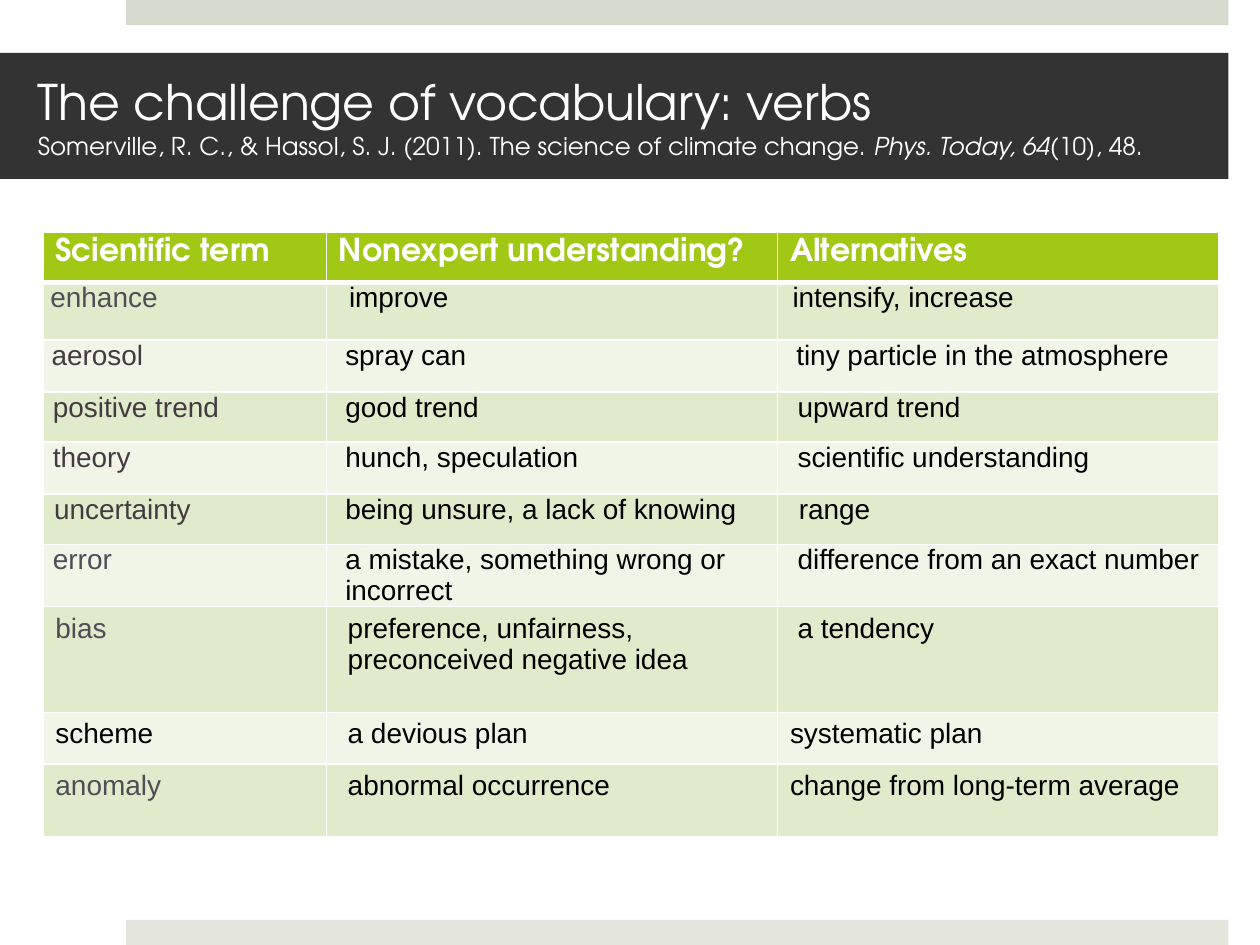
from lxml import etree
from pptx import Presentation
from pptx.dml.color import RGBColor
from pptx.enum.shapes import MSO_SHAPE
from pptx.enum.text import MSO_ANCHOR, PP_ALIGN
from pptx.oxml.ns import qn
from pptx.util import Inches, Pt

RECTANGLE = MSO_SHAPE.RECTANGLE
MIDDLE = MSO_ANCHOR.MIDDLE
LEFT = PP_ALIGN.LEFT

WHITE = RGBColor(0xFF, 0xFF, 0xFF)
BLACK = RGBColor(0x00, 0x00, 0x00)
TOP_BAR = RGBColor(0xD6, 0xD9, 0xCD)
BOTTOM_BAR = RGBColor(0xE4, 0xE6, 0xDE)
CHARCOAL = RGBColor(0x33, 0x33, 0x33)
LIME = RGBColor(0xA2, 0xC8, 0x16)
BANDS = (RGBColor(0xE0, 0xEB, 0xCC), RGBColor(0xF0, 0xF5, 0xE8))
SLATE = RGBColor(0x4F, 0x4D, 0x56)
PLUM = RGBColor(0x44, 0x3B, 0x41)

HEADING_FONT = "TeX Gyre Adventor"
BODY_FONT = "Arial"

TITLE = "The challenge of vocabulary: verbs"
CITATION = [
    ("Somerville, R. C., & Hassol, S. J. (2011). The science of climate change. ", False),
    ("Phys. Today, 64", True),
    ("(10), 48.", False),
]

HEADINGS = ("Scientific term", "Nonexpert understanding?", "Alternatives")
HEADING_HEIGHT = 0.4
COLUMN_WIDTHS = (2.25, 3.58, 3.5)

# (term, nonexpert understanding, alternative), term colour, row height, left insets, top inset
VOCABULARY = [
    (("enhance", "improve", "intensify, increase"), SLATE, 0.46, (0.06, 0.18, 0.12), 0),
    (("aerosol", "spray can", "tiny particle in the atmosphere"),
     PLUM, 0.41, (0.07, 0.15, 0.15), 0),
    (("positive trend", "good trend", "upward trend"), PLUM, 0.4, (0.08, 0.15, 0.16), 0),
    (("theory", "hunch, speculation", "scientific understanding"),
     PLUM, 0.41, (0.08, 0.15, 0.16), 0),
    (("uncertainty", "being unsure, a lack of knowing", "range"),
     PLUM, 0.4, (0.09, 0.15, 0.17), 0),
    (("error", "a mistake, something wrong or incorrect", "difference from an exact number"),
     SLATE, 0.49, (0.08, 0.15, 0.16), 0),
    (("bias", "preference, unfairness, preconceived negative idea", "a tendency"),
     SLATE, 0.84, (0.1, 0.17, 0.16), 0.05),
    (("scheme", "a devious plan", "systematic plan"), BLACK, 0.41, (0.1, 0.17, 0.1), 0.05),
    (("anomaly", "abnormal occurrence", "change from long-term average"),
     SLATE, 0.58, (0.1, 0.17, 0.1), 0.05),
]


def add_bar(slide, left, top, width, height, color):
    bar = slide.shapes.add_shape(
        RECTANGLE, Inches(left), Inches(top), Inches(width), Inches(height))
    bar.shadow.inherit = False
    bar.fill.solid()
    bar.fill.fore_color.rgb = color
    bar.line.fill.background()
    return bar


def add_run(paragraph, text, font, size, color, bold=False, italic=False):
    run = paragraph.add_run()
    run.text = text
    run.font.name = font
    run.font.size = Pt(size)
    run.font.color.rgb = color
    run.font.bold = bold
    run.font.italic = italic


def set_borders(cell, bottom_width):
    """Draw white borders, which must precede the fill in the cell properties."""
    properties = cell._tc.get_or_add_tcPr()
    widths = {"a:lnL": 1, "a:lnR": 1, "a:lnT": 1, "a:lnB": bottom_width}
    for position, (side, width) in enumerate(widths.items()):
        line = etree.Element(qn(side), w=str(Pt(width)))
        fill = etree.SubElement(line, qn("a:solidFill"))
        etree.SubElement(fill, qn("a:srgbClr"), val=str(WHITE))
        properties.insert(position, line)


def style_cell(cell, fill, left, top, right, bottom_width=1):
    cell.fill.solid()
    cell.fill.fore_color.rgb = fill
    cell.margin_left, cell.margin_right = Inches(left), Inches(right)
    cell.margin_top = Inches(top)
    cell.margin_bottom = 0
    set_borders(cell, bottom_width)


def add_title(slide):
    band = add_bar(slide, 0, 0.42, 9.75, 1, CHARCOAL)
    frame = band.text_frame
    frame.word_wrap = True
    frame.vertical_anchor = MIDDLE
    frame.margin_left = frame.margin_right = Inches(0.3)
    paragraph = frame.paragraphs[0]
    paragraph.alignment = LEFT
    add_run(paragraph, TITLE, HEADING_FONT, 28, WHITE)
    paragraph.add_line_break()
    for text, italic in CITATION:
        add_run(paragraph, text, HEADING_FONT, 14, WHITE, italic=italic)


def add_vocabulary(slide):
    heights = [HEADING_HEIGHT] + [height for _, _, height, _, _ in VOCABULARY]
    table = slide.shapes.add_table(
        len(heights), len(HEADINGS), Inches(0.34), Inches(1.84),
        Inches(sum(COLUMN_WIDTHS)), Inches(sum(heights))).table
    for column, width in zip(table.columns, COLUMN_WIDTHS):
        column.width = Inches(width)
    for row, height in zip(table.rows, heights):
        row.height = Inches(height)

    for cell, heading in zip(table.rows[0].cells, HEADINGS):
        style_cell(cell, LIME, 0.1, 0.05, 0.1, bottom_width=3)
        add_run(cell.text_frame.paragraphs[0], heading, HEADING_FONT, 18, WHITE, bold=True)

    for index, (texts, term_color, _, insets, top) in enumerate(VOCABULARY):
        colors = (term_color, BLACK, BLACK)
        cells = table.rows[index + 1].cells
        for cell, text, color, left in zip(cells, texts, colors, insets):
            style_cell(cell, BANDS[index % 2], left, top, 2 * top)
            add_run(cell.text_frame.paragraphs[0], text, BODY_FONT, 16, color)


def main():
    presentation = Presentation()
    presentation.slide_width, presentation.slide_height = Inches(10), Inches(7.5)
    slide = presentation.slides.add_slide(presentation.slide_layouts[6])
    add_bar(slide, 1, 0, 8.75, 0.2, TOP_BAR)
    add_bar(slide, 1, 7.3, 8.75, 0.2, BOTTOM_BAR)
    add_title(slide)
    add_vocabulary(slide)
    presentation.save("out.pptx")


if __name__ == "__main__":
    main()
